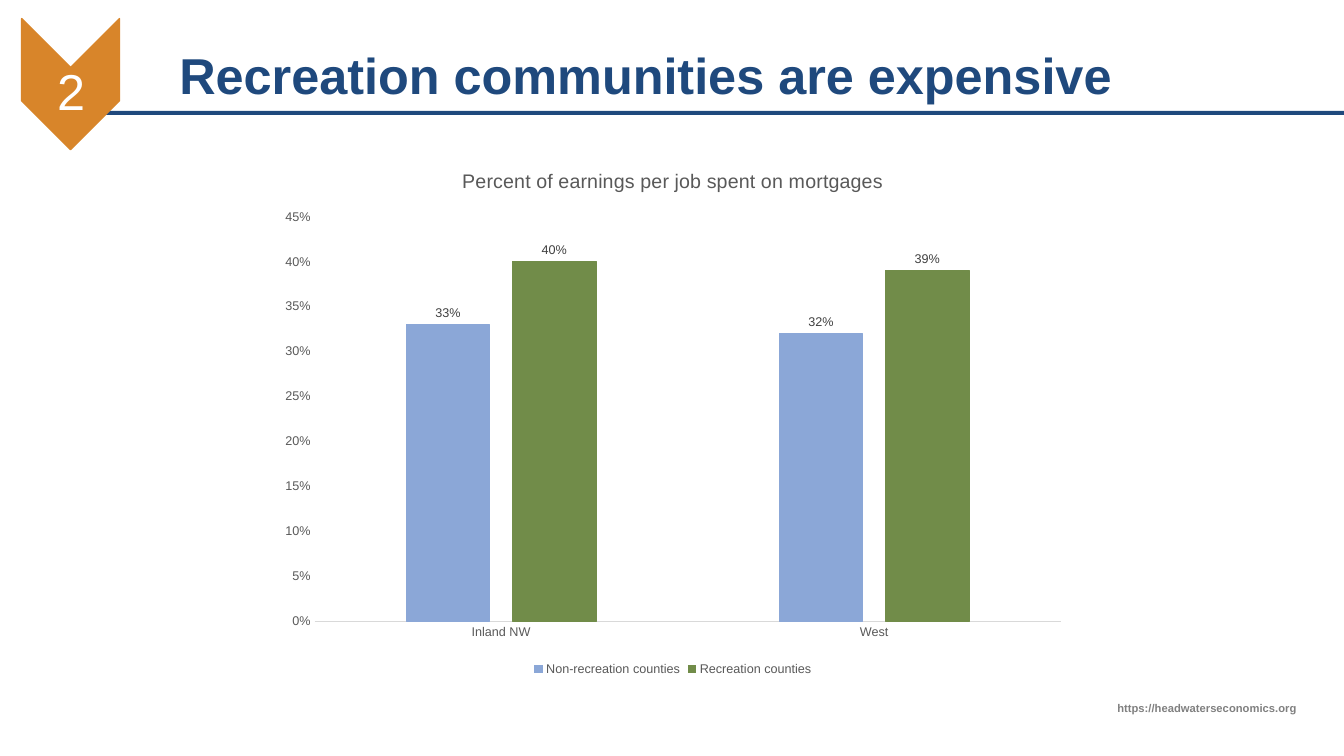
from lxml import etree
from pptx import Presentation
from pptx.chart.data import CategoryChartData
from pptx.dml.color import RGBColor
from pptx.enum.chart import XL_CHART_TYPE, XL_LABEL_POSITION, XL_LEGEND_POSITION, XL_TICK_MARK
from pptx.enum.shapes import MSO_SHAPE
from pptx.enum.text import MSO_ANCHOR, PP_ALIGN
from pptx.util import Emu, Pt

EMU_PER_PX = 9144
FONT = "Arial"
NAVY, ORANGE, WHITE, SOURCE_GRAY = "1F497D", "D8852A", "FFFFFF", "808080"
CHART_GRAY, LABEL_GRAY, AXIS_GRAY = "595959", "404040", "D9D9D9"
REGIONS = ["Inland NW", "West"]
COUNTIES = [
    ("Non-recreation counties", [0.33, 0.32], "8BA7D7"),
    ("Recreation counties", [0.40, 0.39], "718C49"),
]


def px(*lengths):
    """Turn pixel lengths into EMU."""
    return [Emu(length * EMU_PER_PX) for length in lengths]


def color(target, value):
    """Give a color format its hex color."""
    target.rgb = RGBColor.from_string(value)


def paint(fill, value):
    """Make a fill solid in a hex color."""
    fill.solid()
    color(fill.fore_color, value)


def set_font(font, size, value, bold=False):
    """Set face, size, color and weight."""
    font.name, font.size, font.bold = FONT, Pt(size), bold
    color(font.color, value)


def add_block(slide, preset, box, fill, rotation=0):
    """Add a plain filled shape."""
    block = slide.shapes.add_shape(preset, *px(*box))
    block.shadow.inherit = False
    block.rotation = rotation
    paint(block.fill, fill)
    block.line.fill.background()
    return block


def add_text(slide, box, text, size, value, bold=False, align=PP_ALIGN.LEFT,
             anchor=MSO_ANCHOR.TOP, spacing=1.0, inset=None):
    """Add a wrapped one-paragraph text box."""
    frame = slide.shapes.add_textbox(*px(*box)).text_frame
    frame.word_wrap = True
    frame.vertical_anchor = anchor
    if inset is not None:
        (margin,) = px(inset)
        frame.margin_left = frame.margin_right = margin
        frame.margin_top = frame.margin_bottom = margin
    paragraph = frame.paragraphs[0]
    paragraph.text = text
    paragraph.alignment = align
    paragraph.line_spacing = spacing
    set_font(paragraph.font, size, value, bold)


def style_axis(axis):
    """Remove ticks and gridlines and set the axis labels."""
    axis.major_tick_mark = axis.minor_tick_mark = XL_TICK_MARK.NONE
    axis.has_major_gridlines = False
    set_font(axis.tick_labels.font, 9, CHART_GRAY)


def style_series(series, value):
    """Color one series and show its percentages."""
    paint(series.format.fill, value)
    paint(series.format.line.fill, value)
    series.format.line.width = Pt(0.75)
    labels = series.data_labels
    labels.show_value = True
    labels.position = XL_LABEL_POSITION.OUTSIDE_END
    labels.number_format, labels.number_format_is_linked = "0%", False
    set_font(labels.font, 9, LABEL_GRAY)


def add_mortgage_chart(slide, box, title):
    """Add the clustered columns by region."""
    shares = CategoryChartData(number_format="0%")
    shares.categories = REGIONS
    for name, values, _ in COUNTIES:
        shares.add_series(name, values)
    chart = slide.shapes.add_chart(XL_CHART_TYPE.COLUMN_CLUSTERED, *px(*box), shares).chart
    set_font(chart.font, 10, "000000")
    chart.has_title = True
    heading = chart.chart_title.text_frame.paragraphs[0]
    heading.text = title
    set_font(heading.font, 14, CHART_GRAY)
    chart.chart_title.include_in_layout = False
    chart.has_legend = True
    chart.legend.position = XL_LEGEND_POSITION.BOTTOM
    chart.legend.include_in_layout = False
    set_font(chart.legend.font, 9, CHART_GRAY)
    style_axis(chart.category_axis)
    paint(chart.category_axis.format.line.fill, AXIS_GRAY)
    chart.category_axis.format.line.width = Pt(0.75)
    share_axis = chart.value_axis
    style_axis(share_axis)
    share_axis.format.line.fill.background()
    share_axis.minimum_scale, share_axis.maximum_scale, share_axis.major_unit = 0, 0.45, 0.05
    share_axis.tick_labels.number_format = "0%"
    share_axis.tick_labels.number_format_is_linked = False
    columns = chart.plots[0]
    columns.gap_width, columns.overlap, columns.vary_by_categories = 219, -27, False
    for series, (_, _, value) in zip(columns.series, COUNTIES):
        style_series(series, value)


def main():
    """Build and save the slide."""
    deck = Presentation()
    deck.slide_width, deck.slide_height = px(1333, 750)
    slide = deck.slides.add_slide(deck.slide_layouts[6])
    add_block(slide, MSO_SHAPE.RECTANGLE, (100, 110, 1233, 4), NAVY)
    add_text(slide, (872, 691, 424, 24), "https://headwaterseconomics.org", 8,
             SOURCE_GRAY, bold=True, align=PP_ALIGN.RIGHT)
    add_text(slide, (168, 40, 1074, 70), "Recreation communities are expensive", 36,
             NAVY, bold=True, anchor=MSO_ANCHOR.BOTTOM, spacing=0.9)
    badge = add_block(slide, MSO_SHAPE.CHEVRON, (5, 35, 130, 97), ORANGE, rotation=90)
    paint(badge.line.fill, ORANGE)
    badge.line.width = Pt(1)
    add_text(slide, (22, 74, 97, 39), "2", 36, WHITE, align=PP_ALIGN.CENTER,
             anchor=MSO_ANCHOR.MIDDLE, spacing=0.9, inset=3)
    add_mortgage_chart(slide, (267, 148, 801, 527),
                       "Percent of earnings per job spent on mortgages")
    deck.save("out.pptx")


if __name__ == "__main__":
    main()
